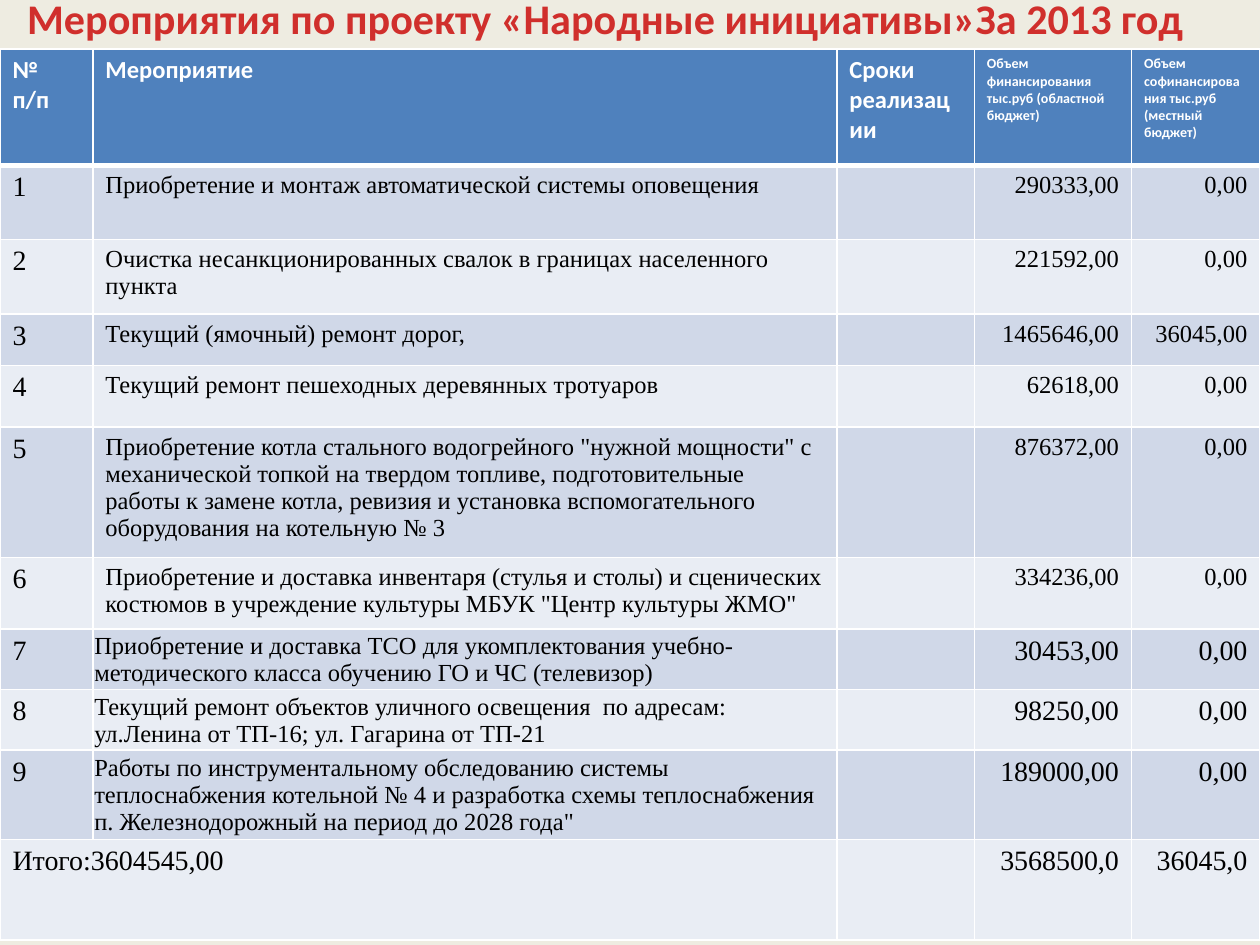
from lxml import etree
from pptx import Presentation
from pptx.dml.color import RGBColor
from pptx.enum import text
from pptx.oxml import ns
from pptx.util import Cm, Pt

PAPER = RGBColor(0xEE, 0xEC, 0xE1)
RED = RGBColor(0xD0, 0x2F, 0x2C)
BLUE = RGBColor(0x4F, 0x81, 0xBD)
BAND_DARK = RGBColor(0xD0, 0xD8, 0xE8)
BAND_LIGHT = RGBColor(0xE9, 0xED, 0xF4)
WHITE = RGBColor(0xFF, 0xFF, 0xFF)
BLACK = RGBColor(0, 0, 0)

HEADERS = [
    "№ п/п",
    "Мероприятие",
    "Сроки реализации",
    "Объем финансирования тыс.руб (областной бюджет)",
    "Объем софинансирования тыс.руб (местный бюджет)",
]
MEASURES = [
    ("Приобретение и монтаж автоматической системы оповещения", "290333,00", "0,00"),
    ("Очистка несанкционированных свалок в границах населенного пункта", "221592,00", "0,00"),
    ("Текущий (ямочный) ремонт дорог,", "1465646,00", "36045,00"),
    ("Текущий ремонт пешеходных деревянных тротуаров", "62618,00", "0,00"),
    ('Приобретение котла стального водогрейного "нужной мощности" с механической топкой '
     "на твердом топливе, подготовительные работы к замене котла, ревизия и установка "
     "вспомогательного оборудования на котельную № 3", "876372,00", "0,00"),
    ("Приобретение и доставка инвентаря (стулья и столы) и сценических костюмов "
     'в учреждение культуры МБУК "Центр культуры ЖМО"', "334236,00", "0,00"),
    ("Приобретение и доставка ТСО для укомплектования учебно-методического класса "
     "обучению ГО и ЧС (телевизор)", "30453,00", "0,00"),
    ("Текущий ремонт объектов уличного освещения  по адресам: ул.Ленина от ТП-16; "
     "ул. Гагарина от ТП-21", "98250,00", "0,00"),
    ("Работы по инструментальному обследованию системы теплоснабжения котельной № 4 "
     "и разработка схемы теплоснабжения п. Железнодорожный на период до 2028 года\"",
     "189000,00", "0,00"),
]
TOTALS = ["Итого:3604545,00", "", "", "3568500,0", "36045,0"]
COLUMN_WIDTHS = [1.87, 15, 2.77, 3.17, 2.59]
ROW_HEIGHTS = [2.34, 1.5, 1.5, 1.04, 1.24, 2.44, 1.35, 1.22, 1.12, 1.68, 2.03]
FIRST_TIGHT_ROW = 7


def style_span(span, name, size, color, bold=False):
    span.font.name = name
    span.font.size = Pt(size)
    span.font.bold = bold
    span.font.color.rgb = color


def add_title(page, left, top, width, height):
    box = page.shapes.add_textbox(Cm(left), Cm(top), Cm(width), Cm(height))
    frame = box.text_frame
    frame.word_wrap = True
    frame.margin_top = 0
    frame.margin_bottom = Cm(0.7)
    frame.vertical_anchor = text.MSO_ANCHOR.MIDDLE
    frame.text = "Мероприятия по проекту «Народные инициативы»За 2013 год"
    para = frame.paragraphs[0]
    para.alignment = text.PP_ALIGN.CENTER
    style_span(para.runs[0], "Calibri", 24.1, RED, bold=True)


def set_borders(cell, bottom):
    properties = cell._tc.get_or_add_tcPr()
    for index, (side, width) in enumerate([("L", 1), ("R", 1), ("T", 1), ("B", bottom)]):
        line = etree.Element(ns.qn(f"a:ln{side}"), w=str(Pt(width)))
        fill = etree.SubElement(line, ns.qn("a:solidFill"))
        etree.SubElement(fill, ns.qn("a:srgbClr"), val=str(WHITE))
        properties.insert(index, line)


def fill_cell(cell, content, color, name, size, font_color, bold=False, bottom=1):
    cell.fill.solid()
    cell.fill.fore_color.rgb = color
    set_borders(cell, bottom)
    if content:
        cell.text_frame.text = content
        style_span(cell.text_frame.paragraphs[0].runs[0], name, size, font_color, bold)


def fill_body_row(table, row, values):
    color = BAND_DARK if row % 2 else BAND_LIGHT
    tight = row >= FIRST_TIGHT_ROW
    amount_size = 16 if tight else 14
    sizes = [16, 14, 14, amount_size, amount_size]
    for column, (content, size) in enumerate(zip(values, sizes)):
        cell = table.cell(row, column)
        fill_cell(cell, content, color, "Times New Roman", size, BLACK)
        if column >= 3:
            cell.text_frame.paragraphs[0].alignment = text.PP_ALIGN.RIGHT
        if column == 1 and tight and content:
            cell.margin_left = cell.margin_right = cell.margin_top = Cm(0.03)
            cell.margin_bottom = 0
            cell.vertical_anchor = text.MSO_ANCHOR.MIDDLE


def add_measures_table(page, left, top):
    table = page.shapes.add_table(
        len(ROW_HEIGHTS), len(COLUMN_WIDTHS), Cm(left), Cm(top),
        Cm(sum(COLUMN_WIDTHS)), Cm(sum(ROW_HEIGHTS))).table
    for column, width in zip(table.columns, COLUMN_WIDTHS):
        column.width = Cm(width)
    for row, height in zip(table.rows, ROW_HEIGHTS):
        row.height = Cm(height)
    for column, header in enumerate(HEADERS):
        fill_cell(table.cell(0, column), header, BLUE, "Calibri",
                  14 if column < 3 else 8, WHITE, bold=True, bottom=3)
    for row, (measure, regional, local) in enumerate(MEASURES, 1):
        fill_body_row(table, row, [str(row), measure, "", regional, local])
    last = len(ROW_HEIGHTS) - 1
    fill_body_row(table, last, TOTALS)
    table.cell(last, 0).merge(table.cell(last, 1))


def main():
    deck = Presentation()
    deck.slide_width, deck.slide_height = Cm(25.4), Cm(19.05)
    page = deck.slides.add_slide(deck.slide_layouts[6])
    page.background.fill.solid()
    page.background.fill.fore_color.rgb = PAPER
    add_title(page, 0, 0, 24.43, 1.4)
    add_measures_table(page, 0, 0.99)
    deck.save("out.pptx")


if __name__ == "__main__":
    main()
